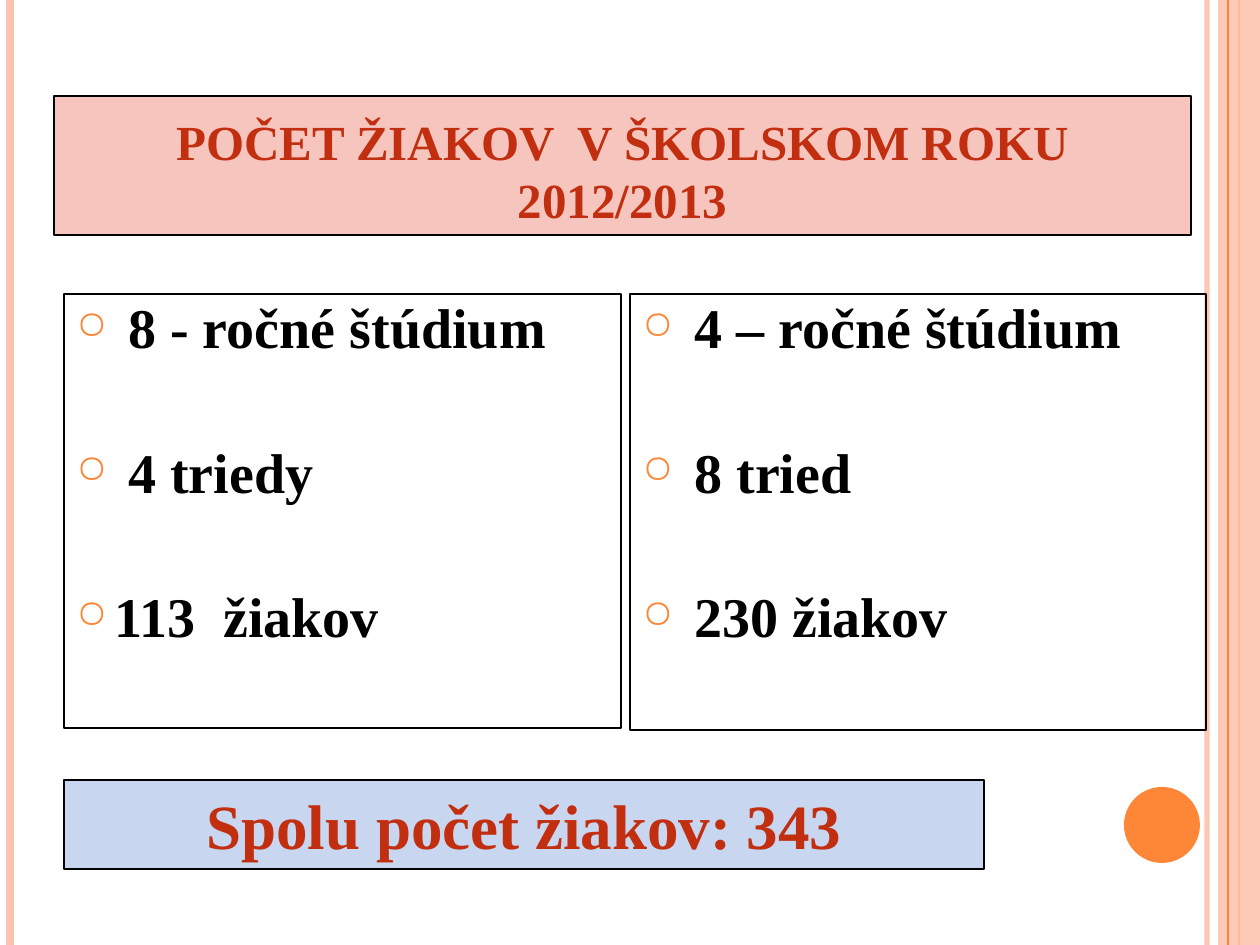
from lxml import etree
from pptx import Presentation
from pptx import util as u
from pptx.dml.color import RGBColor
from pptx.enum import shapes, text
from pptx.oxml.ns import qn

PEACH = RGBColor(0xFE, 0xC3, 0xAE)
ORANGE = RGBColor(0xFE, 0x86, 0x37)
ROSE = RGBColor(0xF1, 0x9E, 0x91)
BLUE = RGBColor(0xC8, 0xD6, 0xF0)
RED = RGBColor(0xC2, 0x2E, 0x10)
BLACK = RGBColor(0, 0, 0)


def px(n):
    return u.Emu(round(n * 914400 / 126))


class Deck:
    """Style and current slide, with one method per kind of element."""

    font = {"name": "Times New Roman", "bold": True}

    def __init__(self):
        self.prs = Presentation()
        self.prs.slide_width, self.prs.slide_height = px(1260), px(945)
        self.s = self.prs.slides.add_slide(self.prs.slide_layouts[6])

    def set_alpha(self, fill, percent):
        clr = fill.find(".//" + qn("a:srgbClr"))
        etree.SubElement(clr, qn("a:alpha"), val=str(percent * 1000))

    def vline(self, x, color, width, alpha=100):
        c = self.s.shapes.add_connector(
            shapes.MSO_CONNECTOR.STRAIGHT, px(x), 0, px(x), px(945))
        c.line.color.rgb, c.line.width = color, u.Pt(width)
        spPr = c._element.spPr
        if alpha < 100:
            self.set_alpha(spPr, alpha)
        etree.SubElement(spPr, qn("a:effectLst"))

    def shape(self, box, fill=None, alpha=100, border=True, kind="RECTANGLE"):
        sp = self.s.shapes.add_shape(
            getattr(shapes.MSO_SHAPE, kind), *(px(n) for n in box))
        sp.shadow.inherit = False
        if fill is None:
            sp.fill.background()
        else:
            sp.fill.solid()
            sp.fill.fore_color.rgb = fill
            if alpha < 100:
                self.set_alpha(sp._element.spPr, alpha)
        if border:
            sp.line.color.rgb, sp.line.width = BLACK, u.Pt(0.75)
        else:
            sp.line.fill.background()
        return sp

    def paragraph(self, p, words, size, color, **fmt):
        for key, value in fmt.items():
            setattr(p, key, value)
        r = p.add_run()
        r.text = words
        for key, value in {**self.font, "size": u.Pt(size)}.items():
            setattr(r.font, key, value)
        r.font.color.rgb = color

    def banner(self, box, words, size, fill, alpha=100, anchor="TOP", before=0):
        tf = self.shape(box, fill, alpha).text_frame
        tf.word_wrap = True
        tf.vertical_anchor = getattr(text.MSO_ANCHOR, anchor)
        self.paragraph(tf.paragraphs[0], words, size, RED,
                       alignment=text.PP_ALIGN.CENTER, space_before=u.Pt(before))

    def bullets(self, box, items):
        tf = self.shape(box).text_frame
        tf.word_wrap = True
        tf.vertical_anchor = text.MSO_ANCHOR.TOP
        for i, item in enumerate(items):
            p = tf.add_paragraph() if i else tf.paragraphs[0]
            self.paragraph(p, item, 32, BLACK, alignment=text.PP_ALIGN.LEFT,
                           line_spacing=0.9, space_before=u.Pt(48 if i else 6))
            pPr = p._p.get_or_add_pPr()
            pPr.set("marL", str(px(38)))
            pPr.set("indent", str(-px(38)))
            clr = etree.SubElement(pPr, qn("a:buClr"))
            etree.SubElement(clr, qn("a:srgbClr"), val=str(ORANGE))
            etree.SubElement(pPr, qn("a:buSzPct"), val="70000")
            etree.SubElement(pPr, qn("a:buChar"), char="○")


def main():
    d = Deck()
    d.vline(1207, PEACH, 3, alpha=93)
    d.vline(10, PEACH, 4.5)
    d.vline(1239, ORANGE, 1.5)
    d.shape((1218, 0, 42, 945), PEACH, alpha=87, border=False)
    d.vline(1228, ORANGE, 0.75)
    d.shape((1124, 787, 76, 76), ORANGE, border=False, kind="OVAL")
    d.banner((54, 96, 1137, 139), "POČET ŽIAKOV  V ŠKOLSKOM ROKU 2012/2013",
             28, ROSE, alpha=59, anchor="BOTTOM")
    d.bullets((64, 294, 557, 434),
              [" 8 - ročné štúdium", " 4 triedy", "113  žiakov"])
    d.bullets((630, 294, 576, 436),
              [" 4 – ročné štúdium", " 8 tried", " 230 žiakov"])
    d.banner((64, 780, 920, 89), "Spolu počet žiakov: 343", 36, BLUE, before=7)
    d.prs.save("out.pptx")


if __name__ == "__main__":
    main()
